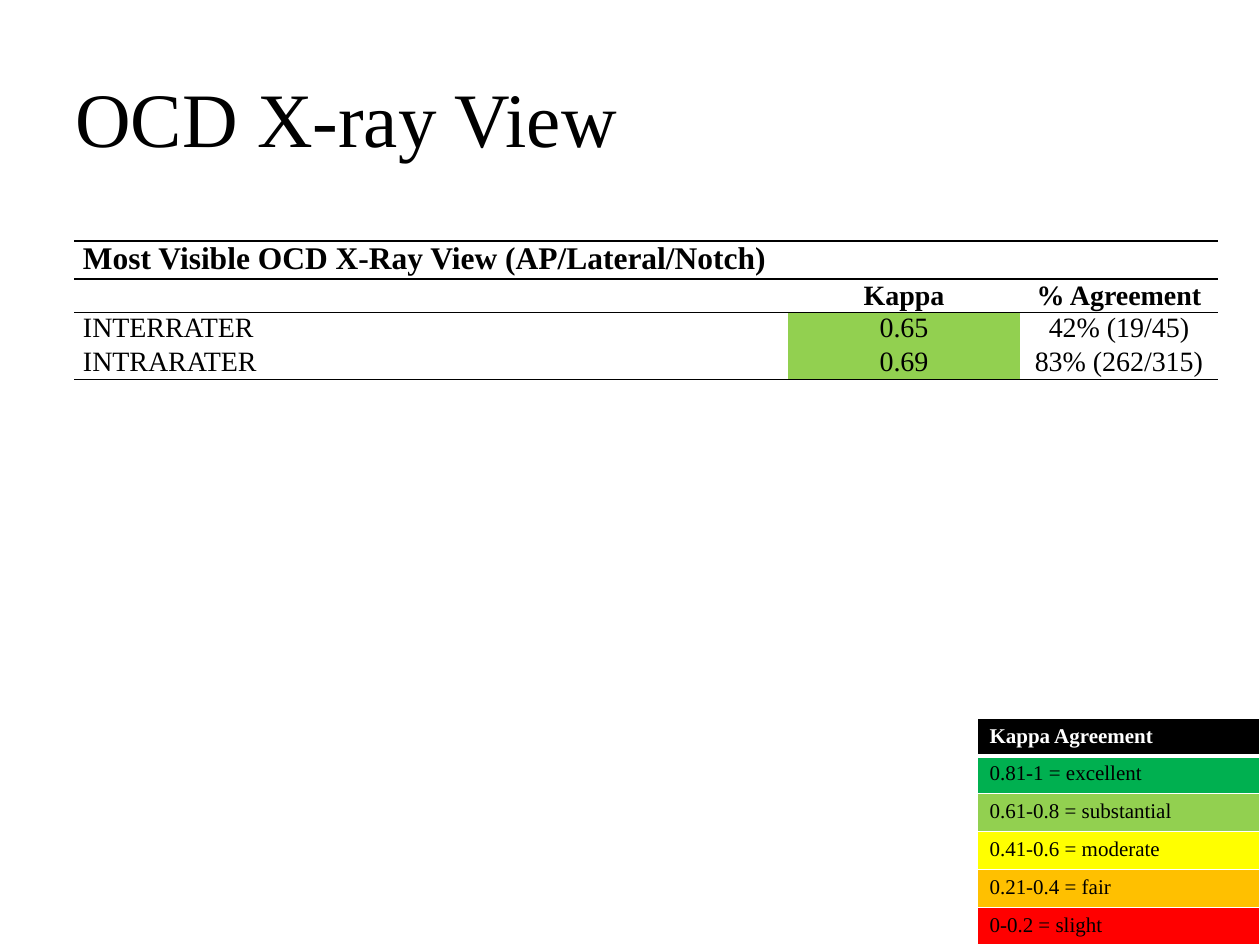
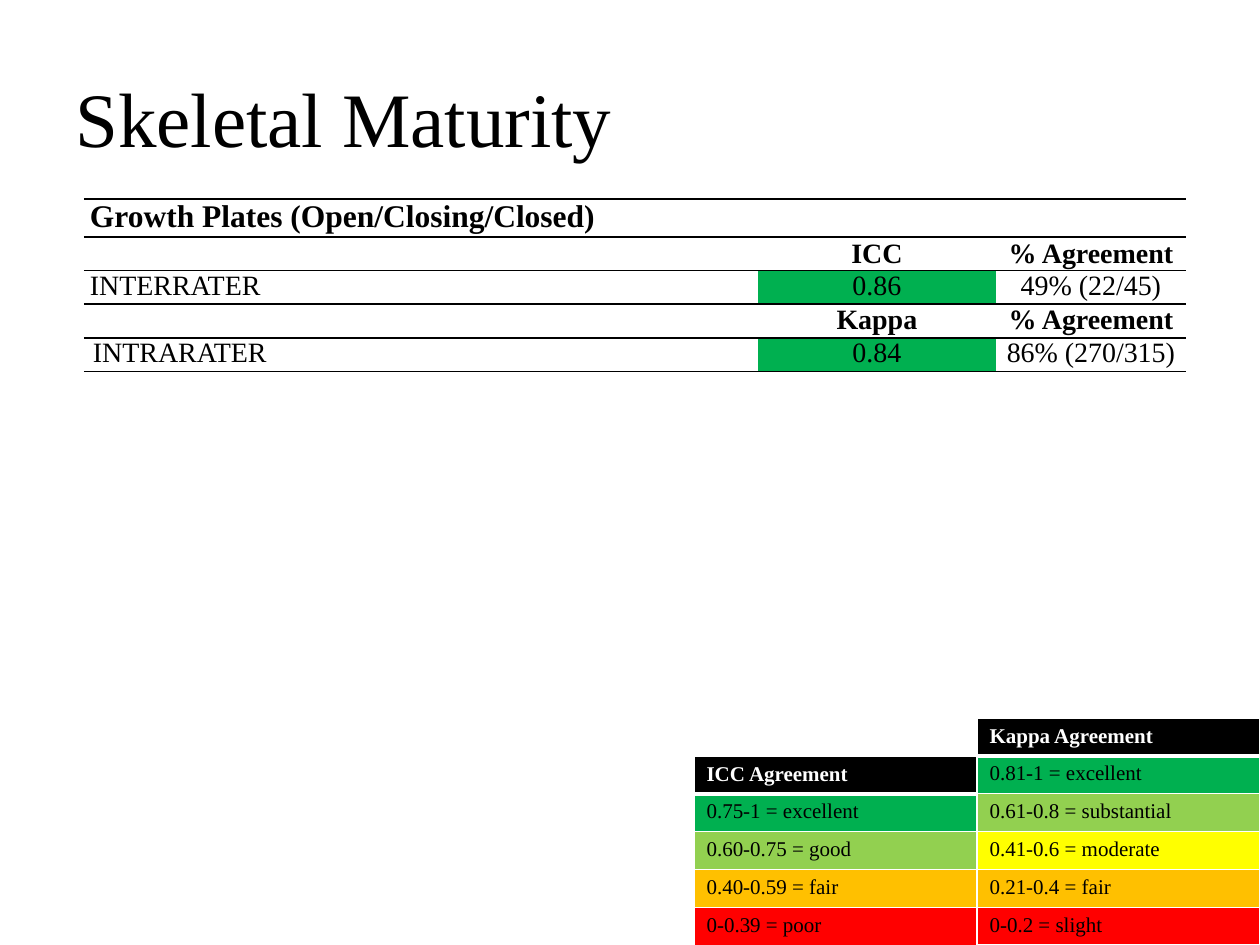
from dataclasses import dataclass

from lxml import etree
from pptx import Presentation
from pptx.dml.color import RGBColor
from pptx.enum.text import MSO_ANCHOR, PP_ALIGN
from pptx.oxml.ns import qn
from pptx.slide import Slide
from pptx.table import Table, _Cell
from pptx.util import Emu, Pt

LEFT, CENTER = PP_ALIGN.LEFT, PP_ALIGN.CENTER
TOP, MIDDLE = MSO_ANCHOR.TOP, MSO_ANCHOR.MIDDLE

PX_PER_INCH = 126
FONT = "Times New Roman"
COLORS = {
    "black": "000000",
    "white": "FFFFFF",
    "green": "00B050",
    "light_green": "92D050",
    "yellow": "FFFF00",
    "orange": "FFC000",
    "red": "FF0000",
}
LEGEND_WIDTH = 283
LEGEND_ROW = 36


@dataclass(frozen=True)
class ResultRow:
    label: str
    score: str
    agreement: str
    height: int = 31
    color: str = ""  # fill of the score cell
    header: bool = False
    inset: int = 9
    anchor: MSO_ANCHOR = TOP
    borders: str = "TB"


@dataclass(frozen=True)
class Results:
    heading: str
    left: int
    top: int
    widths: tuple[int, int, int]
    inset: int
    rows: tuple[ResultRow, ...]


@dataclass(frozen=True)
class Legend:
    heading: str
    left: int
    top: int
    levels: tuple[tuple[str, str], ...]  # text, colour


@dataclass(frozen=True)
class Page:
    title: str
    results: Results
    legends: tuple[Legend, ...]


KAPPA_LEGEND = Legend("Kappa Agreement", 977, 718, (
    ("0.81-1 = excellent", "green"),
    ("0.61-0.8 = substantial", "light_green"),
    ("0.41-0.6 = moderate", "yellow"),
    ("0.21-0.4 = fair", "orange"),
    ("0-0.2 = slight", "red"),
))
ICC_LEGEND = Legend("ICC Agreement", 694, 756, (
    ("0.75-1 = excellent", "green"),
    ("0.60-0.75 = good", "light_green"),
    ("0.40-0.59 = fair", "orange"),
    ("0-0.39 = poor", "red"),
))
PAGES = (
    Page(
        "OCD X-ray View",
        Results("Most Visible OCD X-Ray View (AP/Lateral/Notch)", 74, 241, (714, 232, 198), 9, (
            ResultRow("", "Κappa", "% Agreement", header=True, anchor=MIDDLE),
            ResultRow("INTERRATER", "0.65", "42% (19/45)", color="light_green", borders="T"),
            ResultRow("INTRARATER", "0.69", "83% (262/315)", color="light_green", borders="B"),
        )),
        (KAPPA_LEGEND,),
    ),
    Page(
        "Skeletal Maturity",
        Results("Growth Plates (Open/Closing/Closed)", 84, 199, (674, 238, 190), 6, (
            ResultRow("", "ICC", "% Agreement", 33, header=True, inset=6, anchor=MIDDLE),
            ResultRow("INTERRATER", "0.86", "49% (22/45)", color="green", inset=6),
            ResultRow("", "Kappa", "% Agreement", header=True),
            ResultRow("INTRARATER", "0.84", "86% (270/315)", color="green"),
        )),
        (KAPPA_LEGEND, ICC_LEGEND),
    ),
)


def px(length: int) -> Emu:
    return Emu(round(length * 914400 / PX_PER_INCH))


def rgb(color: str) -> RGBColor:
    return RGBColor.from_string(COLORS[color])


def write(frame, text: str, size: int, color: str = "black",
          bold: bool = False, align: PP_ALIGN = LEFT) -> None:
    paragraph = frame.paragraphs[0]
    paragraph.text = text
    paragraph.alignment = align
    font = paragraph.font
    font.name, font.size, font.bold = FONT, Pt(size), bold
    font.color.rgb = rgb(color)


def set_borders(cell: _Cell, color: str, widths: dict[str, int]) -> None:
    """Draw the sides named in widths (points) and clear the others."""
    properties = cell._tc.get_or_add_tcPr()
    for side in "LRTB":
        line = etree.SubElement(properties, qn(f"a:ln{side}"))
        if side in widths:
            line.set("w", str(Pt(widths[side])))
            fill = etree.SubElement(line, qn("a:solidFill"))
            etree.SubElement(fill, qn("a:srgbClr"), val=COLORS[color])
        else:
            line.set("w", "0")
            etree.SubElement(line, qn("a:noFill"))


def set_fill(cell: _Cell, color: str) -> None:
    if color:
        cell.fill.solid()
        cell.fill.fore_color.rgb = rgb(color)
    else:
        cell.fill.background()


def set_insets(cell: _Cell, side: int) -> None:
    cell.margin_left = cell.margin_right = px(side)
    cell.margin_top = cell.margin_bottom = 0


def add_grid(slide: Slide, left: int, top: int,
             widths: tuple[int, ...], heights: list[int]) -> Table:
    table = slide.shapes.add_table(len(heights), len(widths), px(left), px(top),
                                   px(sum(widths)), px(sum(heights))).table
    table.first_row = table.horz_banding = False
    for column, width in zip(table.columns, widths):
        column.width = px(width)
    for row, height in zip(table.rows, heights):
        row.height = px(height)
    return table


def add_title(slide: Slide, text: str) -> None:
    frame = slide.shapes.add_textbox(px(63), px(38), px(1134), px(157)).text_frame
    frame.word_wrap = True
    frame.vertical_anchor = MIDDLE
    write(frame, text, 44)


def add_results(slide: Slide, results: Results) -> None:
    heights = [35] + [row.height for row in results.rows]
    table = add_grid(slide, results.left, results.top, results.widths, heights)

    # Heading across all columns
    for cell in table.rows[0].cells:
        set_borders(cell, "black", {"T": 1, "B": 1})
        set_fill(cell, "")
        set_insets(cell, results.inset)
    heading = table.cell(0, 0)
    heading.merge(table.cell(0, len(results.widths) - 1))
    write(heading.text_frame, results.heading, 18, bold=True)

    # Column headers and ratings
    for index, row in enumerate(results.rows, 1):
        for column, text in enumerate((row.label, row.score, row.agreement)):
            cell = table.cell(index, column)
            set_borders(cell, "black", dict.fromkeys(row.borders, 1))
            set_fill(cell, row.color if column == 1 else "")
            set_insets(cell, row.inset)
            cell.vertical_anchor = row.anchor
            write(cell.text_frame, text, 16, bold=row.header,
                  align=CENTER if column else LEFT)


def add_legend(slide: Slide, legend: Legend) -> None:
    entries = ((legend.heading, "black"),) + legend.levels
    table = add_grid(slide, legend.left, legend.top, (LEGEND_WIDTH,),
                     [LEGEND_ROW] * len(entries))
    for index, (text, color) in enumerate(entries):
        cell = table.cell(index, 0)
        is_heading = index == 0
        set_borders(cell, "white", {"L": 1, "R": 1, "T": 3 if index == 1 else 1,
                                    "B": 3 if is_heading else 1})
        set_fill(cell, color)
        write(cell.text_frame, text, 12, "white" if is_heading else "black", is_heading)


def main() -> None:
    deck = Presentation()
    deck.slide_width, deck.slide_height = px(1260), px(945)
    blank = deck.slide_layouts[6]
    for page in PAGES:
        slide = deck.slides.add_slide(blank)
        add_title(slide, page.title)
        add_results(slide, page.results)
        for legend in page.legends:
            add_legend(slide, legend)
    deck.save("out.pptx")


if __name__ == "__main__":
    main()
